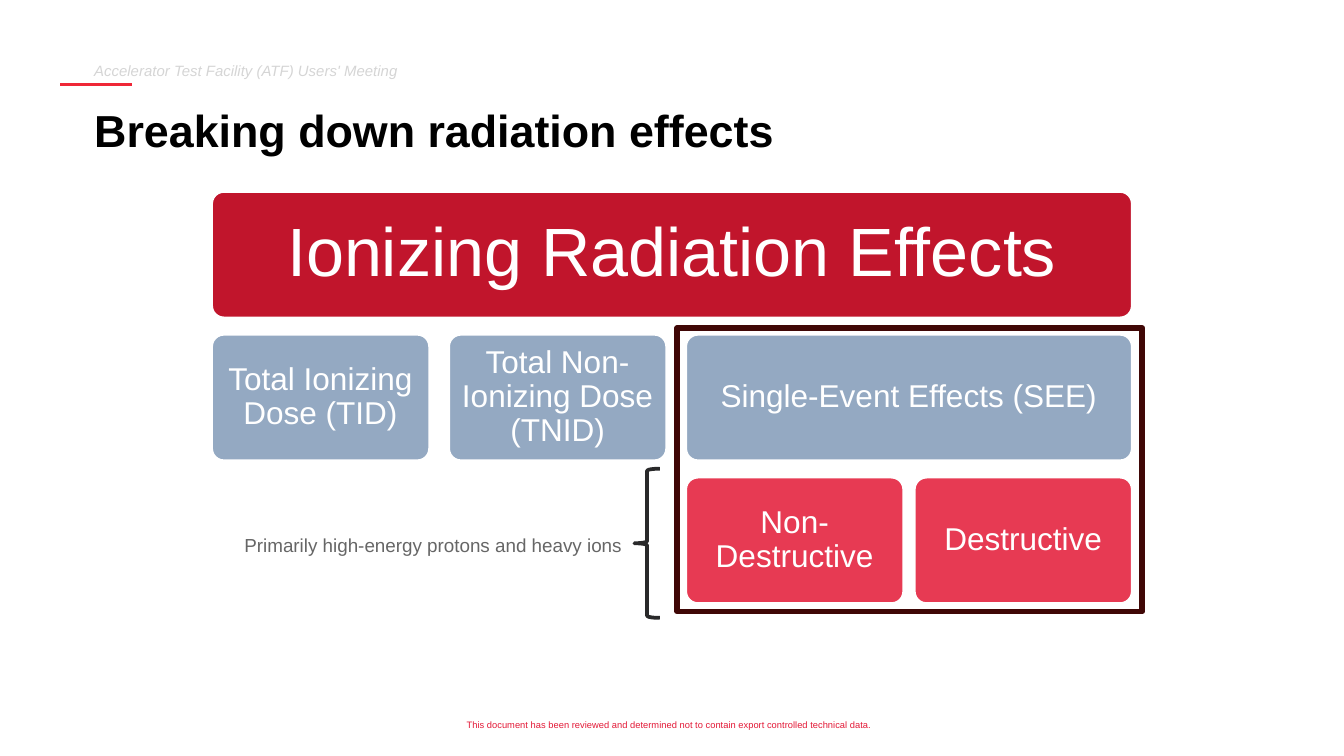
from dataclasses import dataclass

from lxml import etree
from pptx import Presentation
from pptx.dml.color import RGBColor
from pptx.enum.shapes import MSO_CONNECTOR, MSO_SHAPE
from pptx.enum.text import MSO_ANCHOR, MSO_AUTO_SIZE, PP_ALIGN
from pptx.oxml.ns import qn
from pptx.util import Cm, Pt

LEFT, CENTER = PP_ALIGN.LEFT, PP_ALIGN.CENTER
TOP, MIDDLE = MSO_ANCHOR.TOP, MSO_ANCHOR.MIDDLE
FONT = "Arial"

WHITE, RED, SLATE, CORAL = "FFFFFF", "C1152C", "94A9C2", "E73A53"

# Block grid, in cm
GRID_LEFT, GRID_TOP = 3.99, 3.61
GRID_WIDTH, BLOCK_HEIGHT = 17.42, 2.41
ROW_PITCH, COLUMN_PITCH = 2.7, 4.48
NARROW = 4.14
GRID_RIGHT = GRID_LEFT + GRID_WIDTH
SEE_LEFT = GRID_LEFT + 2 * COLUMN_PITCH


@dataclass
class TextStyle:
    size: float
    color: str
    bold: bool = False
    italic: bool = False
    align: int = LEFT
    anchor: int = TOP
    spacing: float = 1.0
    inset_x: float = 0.0
    inset_y: float = 0.0


@dataclass
class Block:
    text: str
    row: int
    left: float
    width: float
    fill: str
    size: float = 16.9


BLOCKS = [
    Block("Ionizing Radiation Effects", 0, GRID_LEFT, GRID_WIDTH, RED, 36.6),
    Block("Total Ionizing Dose (TID)", 1, GRID_LEFT, NARROW, SLATE),
    Block("Total Non-Ionizing Dose (TNID)", 1, GRID_LEFT + COLUMN_PITCH, NARROW, SLATE),
    Block("Single-Event Effects (SEE)", 1, SEE_LEFT, GRID_RIGHT - SEE_LEFT, SLATE),
    Block("Non-Destructive", 2, SEE_LEFT, NARROW, CORAL),
    Block("Destructive", 2, GRID_RIGHT - NARROW, NARROW, CORAL),
]


def rgb(color: str) -> RGBColor:
    return RGBColor.from_string(color)


def write(shape, text: str, style: TextStyle) -> None:
    frame = shape.text_frame
    frame.text = text
    frame.word_wrap = True
    frame.auto_size = MSO_AUTO_SIZE.NONE
    frame.vertical_anchor = style.anchor
    frame.margin_left = frame.margin_right = Cm(style.inset_x)
    frame.margin_top = frame.margin_bottom = Cm(style.inset_y)
    paragraph = frame.paragraphs[0]
    paragraph.alignment = style.align
    paragraph.line_spacing = style.spacing
    font = paragraph.runs[0].font
    font.name, font.size = FONT, Pt(style.size)
    font.bold, font.italic = style.bold, style.italic
    font.color.rgb = rgb(style.color)


def add_text(slide, text: str, left: float, top: float, width: float,
             height: float, style: TextStyle) -> None:
    box = slide.shapes.add_textbox(Cm(left), Cm(top), Cm(width), Cm(height))
    write(box, text, style)


def add_block(slide, block: Block) -> None:
    top = GRID_TOP + block.row * ROW_PITCH
    shape = slide.shapes.add_shape(
        MSO_SHAPE.ROUNDED_RECTANGLE, Cm(block.left), Cm(top), Cm(block.width), Cm(BLOCK_HEIGHT))
    shape.adjustments[0] = 0.1
    shape.shadow.inherit = False
    shape.fill.solid()
    shape.fill.fore_color.rgb = rgb(block.fill)
    shape.line.color.rgb = rgb(WHITE)
    shape.line.width = Pt(2)
    write(shape, block.text, TextStyle(block.size, WHITE, align=CENTER, anchor=MIDDLE,
                                       spacing=0.9, inset_x=0.17, inset_y=0.17))


def add_outline(slide, kind: int, left: float, top: float, width: float,
                height: float, color: str, weight: float):
    shape = slide.shapes.add_shape(kind, Cm(left), Cm(top), Cm(width), Cm(height))
    shape.shadow.inherit = False
    shape.fill.background()
    shape.line.color.rgb = rgb(color)
    shape.line.width = Pt(weight)
    return shape


def add_accent_line(slide, left: float, right: float, y: float) -> None:
    line = slide.shapes.add_connector(MSO_CONNECTOR.STRAIGHT, Cm(left), Cm(y), Cm(right), Cm(y))
    line.line.color.rgb = rgb("EF2737")
    line.line.width = Pt(1.5)
    etree.SubElement(line._element.spPr, qn("a:effectLst"))


def main() -> None:
    deck = Presentation()
    deck.slide_width, deck.slide_height = Cm(25.4), Cm(14.29)
    slide = deck.slides.add_slide(deck.slide_layouts[5])

    add_text(slide, "This document has been reviewed and determined not to contain "
             "export controlled technical data.", 4.78, 13.49, 15.75, 0.46,
             TextStyle(5, "E31937", align=CENTER, anchor=MIDDLE, spacing=0.9,
                       inset_x=0.13, inset_y=0.13))
    add_accent_line(slide, 1.14, 2.49, 1.59)
    add_text(slide, "Accelerator Test Facility (ATF) Users' Meeting", 1.14, 0.76, 23.09, 0.69,
             TextStyle(8, "D5D5D5", italic=True, spacing=1.2, inset_x=0.64, inset_y=0.33))

    title = slide.shapes.title
    title.left, title.top, title.width, title.height = Cm(1.14), Cm(1.73), Cm(23.09), Cm(1.19)
    write(title, "Breaking down radiation effects",
          TextStyle(24, "000000", bold=True, spacing=0.9, inset_x=0.64, inset_y=0.33))

    for block in BLOCKS:
        add_block(slide, block)

    add_outline(slide, MSO_SHAPE.RECTANGLE, 12.8, 6.2, 8.79, 5.36, "400706", 3)
    add_text(slide, "Primarily high-energy protons and heavy ions", 4.47, 10.01, 7.52, 0.58,
             TextStyle(10.1, "666666", inset_x=0.15, inset_y=0.08))
    brace = add_outline(slide, MSO_SHAPE.LEFT_BRACE, 11.99, 8.86, 0.48, 2.82, "29292A", 2)
    brace.adjustments[0] = 0.08

    deck.save("out.pptx")


if __name__ == "__main__":
    main()
